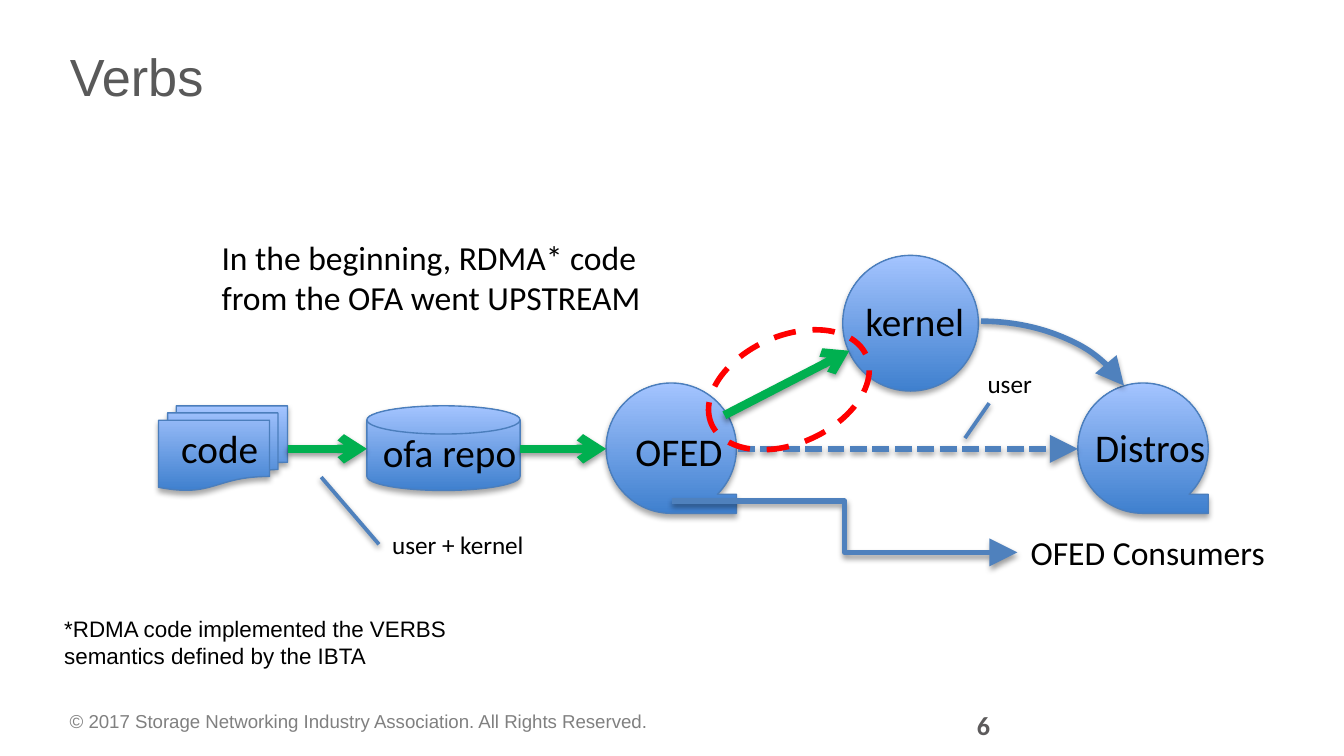
from lxml import etree
from pptx import Presentation
from pptx.dml.color import RGBColor
from pptx.enum.dml import MSO_LINE_DASH_STYLE as Dash
from pptx.enum.shapes import MSO_CONNECTOR as Connector, MSO_SHAPE as Shape
from pptx.enum.text import MSO_ANCHOR as Anchor, MSO_AUTO_SIZE as AutoSize, PP_ALIGN as Align
from pptx.oxml import parse_xml
from pptx.oxml.ns import nsdecls, qn
from pptx.util import Inches, Pt

BLACK = RGBColor(0x00, 0x00, 0x00)
TITLE_GRAY = RGBColor(0x59, 0x59, 0x59)
FOOTER_GRAY = RGBColor(0x80, 0x80, 0x80)
NUMBER_GRAY = RGBColor(0x5D, 0x5B, 0x5C)
DEEP_BLUE = RGBColor(0x3F, 0x80, 0xCE)
PALE_BLUE = RGBColor(0xA4, 0xC4, 0xFF)
OUTLINE_BLUE = RGBColor(0x4B, 0x7E, 0xBC)
LINE_BLUE = RGBColor(0x4F, 0x81, 0xBD)
GREEN = RGBColor(0x00, 0xB0, 0x50)
RED = RGBColor(0xFF, 0x00, 0x00)

FLOW_Y = 3.34  # height of the main line of flow
OPEN_HEAD = {"type": "arrow"}
LARGE_HEAD = {"type": "triangle", "w": "lg", "len": "lg"}


def add_shadow(shape, opacity, distance):
    """Give a shape or connector a soft shadow straight below it."""
    shape._element.spPr.append(parse_xml(
        f'<a:effectLst {nsdecls("a")}>'
        f'<a:outerShdw blurRad="{Pt(3.1)}" dist="{Pt(distance)}" dir="5400000" rotWithShape="0">'
        f'<a:srgbClr val="000000"><a:alpha val="{opacity * 1000}"/></a:srgbClr>'
        '</a:outerShdw></a:effectLst>'))


def style_line(shape, color, width, dash=None, head=None):
    line = shape.line
    line.color.rgb = color
    line.width = Pt(width)
    if dash:
        line.dash_style = dash
    if head:
        etree.SubElement(line._ln, qn("a:tailEnd"), head)


def write(frame, text, size, color=BLACK, font="Calibri", bold=False):
    para = frame.paragraphs[0]
    para.alignment = Align.LEFT
    span = para.add_run()
    span.text = text
    span.font.name = font
    span.font.size = Pt(size)
    span.font.bold = bold
    span.font.color.rgb = color


def add_text(page, place, text, size, wrap=False, fit=True, **look):
    box = page.shapes.add_textbox(*map(Inches, place))
    frame = box.text_frame
    frame.word_wrap = wrap
    frame.auto_size = AutoSize.SHAPE_TO_FIT_TEXT if fit else AutoSize.NONE
    write(frame, text, size, **look)


def add_stage(page, kind, place):
    stage = page.shapes.add_shape(kind, *map(Inches, place))
    stage.fill.gradient()
    stage.fill.gradient_angle = 90
    for stop, color in zip(stage.fill.gradient_stops, (DEEP_BLUE, PALE_BLUE)):
        stop.color.rgb = color
    style_line(stage, OUTLINE_BLUE, 0.75)
    add_shadow(stage, 35, 1.8)


def add_link(page, start, end, color, width, kind=Connector.STRAIGHT, **look):
    link = page.shapes.add_connector(kind, *map(Inches, start + end))
    style_line(link, color, width, **look)
    add_shadow(link, 38, 1.6)


def add_title(page, text):
    title = page.shapes.title
    title.left, title.top, title.width, title.height = map(Inches, (0.42, 0.19, 5.83, 0.75))
    title.text_frame.vertical_anchor = Anchor.MIDDLE
    write(title.text_frame, text, 28, TITLE_GRAY, "Arial")


def add_flow(page):
    # Stages
    for kind, place in (
        (Shape.FLOWCHART_MULTIDOCUMENT, (1.18, 3.02, 0.96, 0.63)),
        (Shape.FLOWCHART_MAGNETIC_DISK, (2.73, 3.02, 1.14, 0.63)),
        (Shape.FLOWCHART_SEQUENTIAL_ACCESS_STORAGE, (4.51, 2.85, 0.97, 0.97)),
        (Shape.FLOWCHART_CONNECTOR, (6.27, 1.9, 1.01, 1.01)),
        (Shape.FLOWCHART_SEQUENTIAL_ACCESS_STORAGE, (8.02, 2.85, 0.97, 0.97)),
    ):
        add_stage(page, kind, place)

    # Upstream path
    for start, end in (
        ((2.14, FLOW_Y), (2.73, FLOW_Y)),
        ((3.87, FLOW_Y), (4.51, FLOW_Y)),
        ((5.39, 3.09), (6.32, 2.61)),
    ):
        add_link(page, start, end, GREEN, 4.5, head=OPEN_HEAD)

    # Paths to distros and consumers
    add_link(page, (5, 3.73), (7.57, 4.11), LINE_BLUE, 3, Connector.ELBOW, head=LARGE_HEAD)
    add_link(page, (5.49, FLOW_Y), (8.02, FLOW_Y), LINE_BLUE, 3,
             dash=Dash.SQUARE_DOT, head=LARGE_HEAD)
    arc = page.shapes.add_shape(Shape.ARC, *map(Inches, (6.14, 2.39, 2.32, 1.6)))
    arc.adjustments[0], arc.adjustments[1] = 162, 205.93
    arc.fill.background()
    style_line(arc, LINE_BLUE, 3, head=LARGE_HEAD)
    add_shadow(arc, 38, 1.6)

    # Pointers from the notes
    for start, end in (((7.36, 3), (7.18, 3.26)), ((2.82, 4.05), (2.39, 3.55))):
        add_link(page, start, end, LINE_BLUE, 2)

    # Highlight around the upstream step
    ring = page.shapes.add_shape(Shape.OVAL, *map(Inches, (5.24, 2.5, 1.26, 0.8)))
    ring.fill.background()
    ring.shadow.inherit = False
    ring.rotation = 336
    style_line(ring, RED, 3, Dash.DASH)


def add_labels(page):
    for text, place, size in (
        ("code", (1.25, 3.11, 0.78, 0.45), 21),
        ("ofa repo", (2.75, 3.14, 1.21, 0.45), 21),
        ("OFED", (4.63, 3.13, 0.86, 0.45), 21),
        ("kernel", (6.34, 2.16, 0.95, 0.45), 21),
        ("Distros", (8.05, 3.1, 1.03, 0.45), 21),
        ("OFED Consumers", (7.57, 3.91, 1.96, 0.4), 18),
        ("user", (7.25, 2.69, 0.54, 0.33), 13.5),
        ("user + kernel", (2.82, 3.89, 1.2, 0.33), 13.5),
    ):
        add_text(page, place, text, size)


def main():
    # Widescreen page, 16 by 9
    deck = Presentation()
    deck.slide_width = Inches(10)
    deck.slide_height = deck.slide_width * 9 // 16
    page = deck.slides.add_slide(deck.slide_layouts[5])

    add_title(page, "Verbs")
    add_flow(page)
    add_labels(page)

    # Statement and footnote
    add_text(page, (1.55, 1.71, 3.42, 0.71),
             "In the beginning, RDMA* code from the OFA went UPSTREAM", 18, wrap=True)
    add_text(page, (0.38, 4.53, 3.54, 0.5),
             "*RDMA code implemented the VERBS semantics defined by the IBTA", 12,
             wrap=True, font="Arial")

    # Footer
    add_text(page, (0.42, 5.23, 8.08, 0.29),
             "© 2017 Storage Networking Industry Association. All Rights Reserved.", 10,
             wrap=True, fit=False, color=FOOTER_GRAY, font="Arial")
    add_text(page, (7.17, 5.23, 2.33, 0.39), "6", 14,
             wrap=True, fit=False, color=NUMBER_GRAY, bold=True)

    deck.save("out.pptx")


if __name__ == "__main__":
    main()
